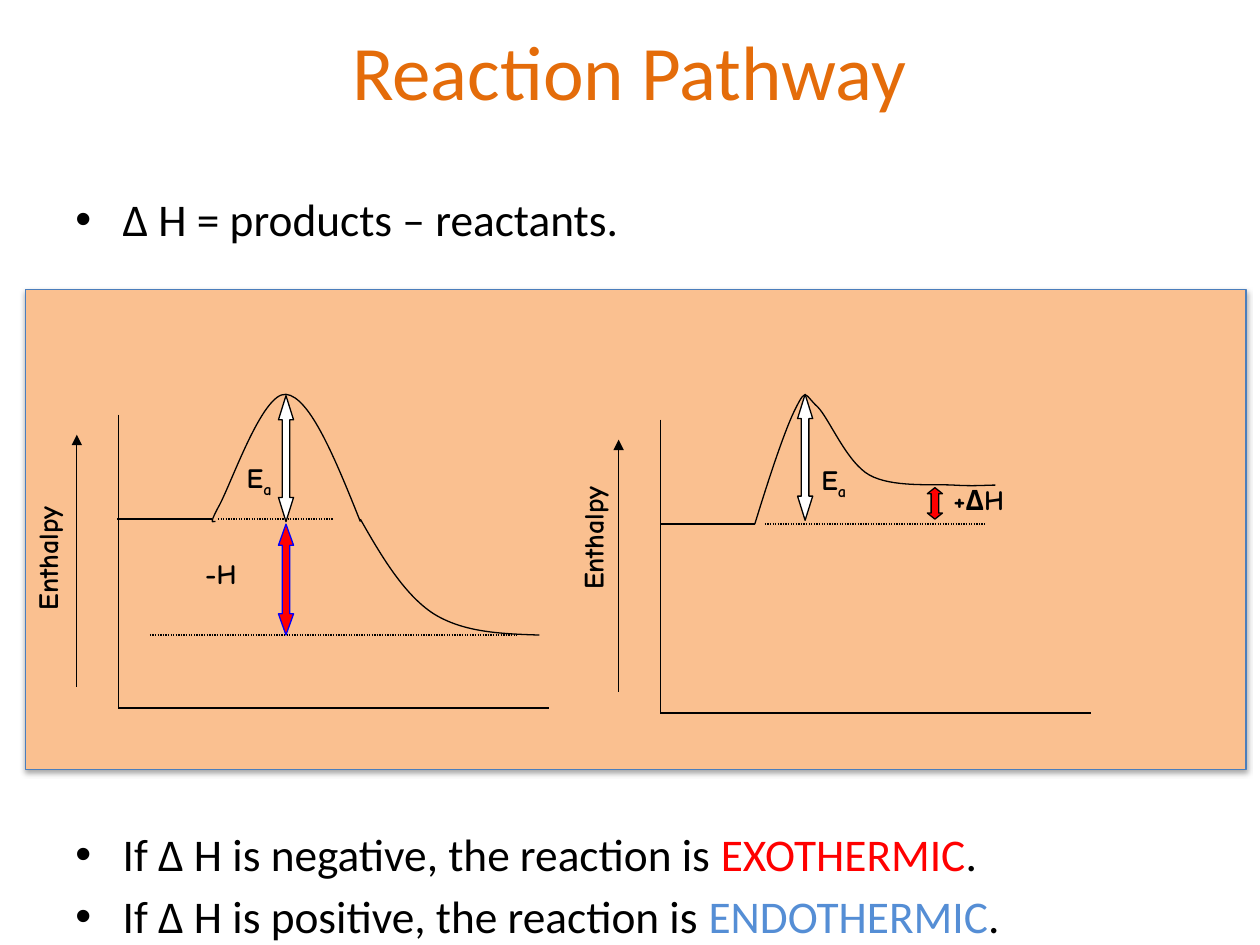
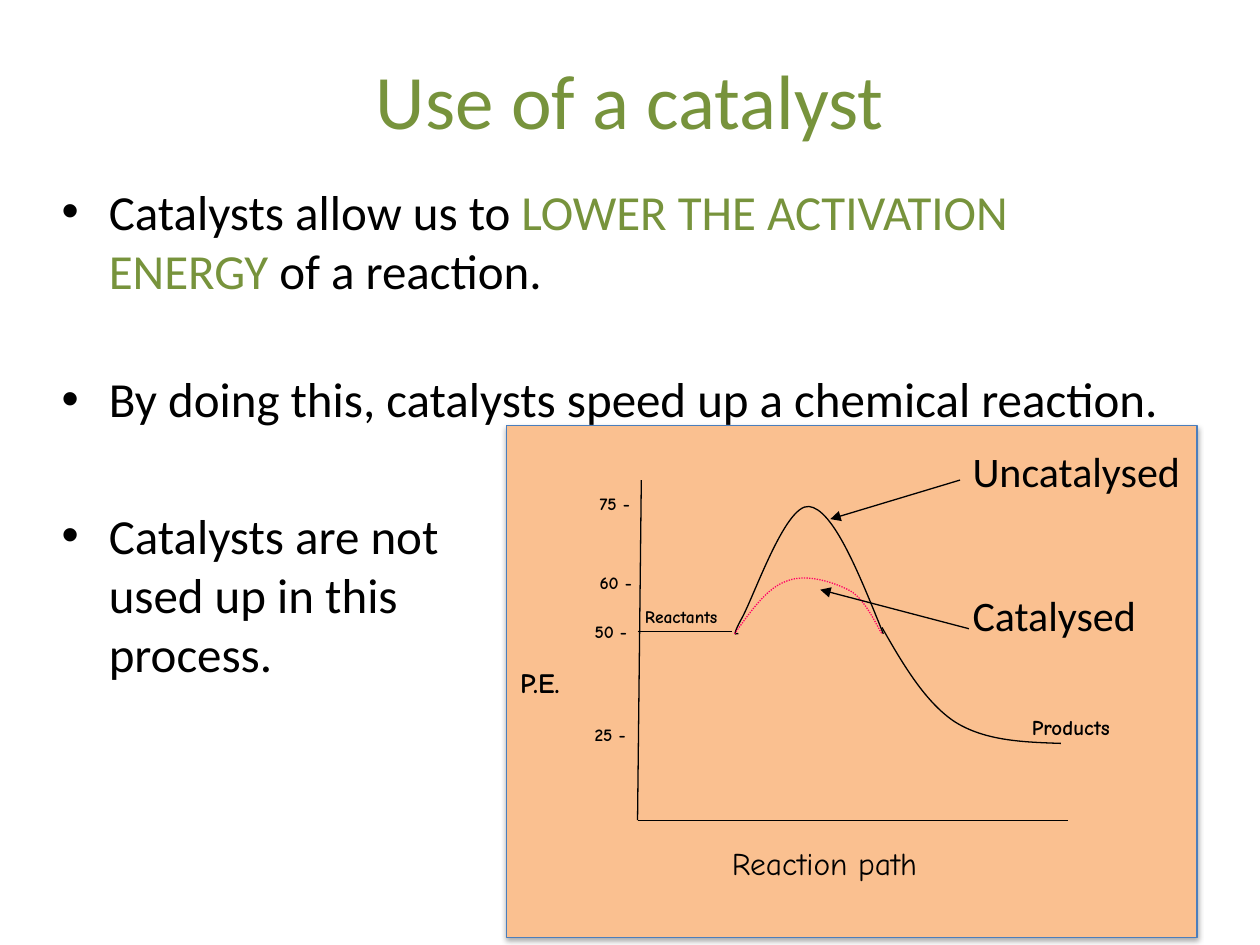
from dataclasses import dataclass
from typing import NamedTuple

from lxml.etree import SubElement
from pptx import Presentation
from pptx.dml.color import RGBColor
from pptx.enum.dml import MSO_LINE_DASH_STYLE as Dash
from pptx.enum.shapes import MSO_CONNECTOR as Connector, MSO_SHAPE as Preset
from pptx.enum.text import MSO_ANCHOR as Anchor, MSO_AUTO_SIZE as AutoSize, PP_ALIGN as Align
from pptx.oxml.ns import qn
from pptx.util import Emu, Inches, Pt

SLIDE_WIDTH, SLIDE_HEIGHT = Inches(10), Inches(7.5)
COLUMN, ROW = SLIDE_WIDTH / 10, SLIDE_HEIGHT / 7.5


@dataclass(frozen=True)
class Theme:
    body_font: str = "Calibri"
    label_font: str = "Comic Neue"
    ink: str = "000000"
    white: str = "FFFFFF"
    red: str = "FF0000"
    blue: str = "0000FF"
    sky: str = "558ED5"
    orange: str = "E46C0A"
    green: str = "77933C"
    pink: str = "FF0066"
    panel: str = "FAC090"
    panel_edge: str = "4B7EBC"
    title_size: float = 44
    wide_body_size: float = 25.9
    body_size: float = 28
    callout_size: float = 24
    caption_size: float = 18
    label_size: float = 16
    products_size: float = 12
    tick_size: float = 10
    line_width: float = 0.75
    bullet_indent: float = 27


THEME = Theme()


class Point(NamedTuple):
    column: float
    row: float

    def shifted(self, columns: float, rows: float) -> "Point":
        return Point(self.column + columns, self.row + rows)

    def emu(self) -> tuple[Emu, Emu]:
        return Emu(round(self.column * COLUMN)), Emu(round(self.row * ROW))


class Box(NamedTuple):
    left: float
    top: float
    width: float
    height: float

    def emu(self) -> tuple[Emu, ...]:
        return Point(self.left, self.top).emu() + Point(self.width, self.height).emu()


class Run(NamedTuple):
    text: str
    color: str = THEME.ink
    subscript: bool = False


class Paragraph(NamedTuple):
    runs: list[Run]
    space_before: float = 0


@dataclass(frozen=True)
class Label:
    runs: list[Run]
    box: Box
    size: float = THEME.label_size
    bold: bool = True
    rotation: float = 0


@dataclass(frozen=True)
class Line:
    start: Point
    end: Point
    dotted: bool = False
    arrow: bool = False


@dataclass(frozen=True)
class Curve:
    """Bezier knots and handles: a start, then three points per segment."""
    points: list[Point]
    color: str = THEME.ink
    dotted: bool = False

    def shifted(self, columns: float, rows: float) -> "Curve":
        return Curve([point.shifted(columns, rows) for point in self.points], self.color, self.dotted)


@dataclass(frozen=True)
class EnergyArrow:
    box: Box
    head: float
    fill: str
    edge: str = THEME.ink


def curve(*points: tuple[float, float], color: str = THEME.ink, dotted: bool = False) -> Curve:
    return Curve([Point(*point) for point in points], color, dotted)


HILL = curve((2.86, 4.14), (2.66, 3.64), (2.46, 3.15), (2.27, 3.13), (2.08, 3.11),
             (1.83, 3.86), (1.73, 4.03), (1.64, 4.2), (1.71, 4.12), (1.71, 4.14))
DESCENT = curve((2.86, 4.12), (3.03, 4.42), (3.21, 4.72), (3.44, 4.87),
                (3.68, 5.02), (3.98, 5.03), (4.28, 5.04))
ENDOTHERMIC = curve((5.99, 4.16), (6.11, 3.77), (6.24, 3.38), (6.32, 3.23), (6.4, 3.07), (6.39, 3.14),
                    (6.49, 3.23), (6.58, 3.32), (6.72, 3.67), (6.9, 3.77), (7.08, 3.87),
                    (7.4, 3.84), (7.57, 3.85), (7.74, 3.86), (7.82, 3.85), (7.9, 3.85))
CATALYSED = curve((5.83, 5.03), (5.96, 4.85), (6.09, 4.66), (6.25, 4.61), (6.4, 4.55), (6.62, 4.62),
                  (6.75, 4.69), (6.87, 4.76), (6.96, 4.97), (7, 5.03), color=THEME.pink, dotted=True)


def rgb(color: str) -> RGBColor:
    return RGBColor.from_string(color)


def style_line(line, color: str = THEME.ink, dotted: bool = False) -> None:
    line.color.rgb = rgb(color)
    line.width = Pt(THEME.line_width)
    if dotted:
        line.dash_style = Dash.ROUND_DOT


def draw_line(slide, line: Line) -> None:
    connector = slide.shapes.add_connector(Connector.STRAIGHT, *line.start.emu(), *line.end.emu())
    style_line(connector.line, dotted=line.dotted)
    if line.arrow:
        SubElement(connector.line._get_or_add_ln(), qn("a:tailEnd"), type="triangle")
    SubElement(connector._element.spPr, qn("a:effectLst"))


def draw_curve(slide, path: Curve) -> None:
    """Lay the points out as a polyline, then join every three into one Bezier segment."""
    builder = slide.shapes.build_freeform(*path.points[0].emu())
    builder.add_line_segments([point.emu() for point in path.points[1:]], close=False)
    shape = builder.convert_to_shape()
    outline = next(shape._element.iter(qn("a:path")))
    segments = outline.findall(qn("a:lnTo"))
    for first in range(0, len(segments), 3):
        bezier = SubElement(outline, qn("a:cubicBezTo"))
        for segment in segments[first:first + 3]:
            bezier.append(segment[0])
            outline.remove(segment)
    shape.shadow.inherit = False
    shape.fill.background()
    style_line(shape.line, path.color, path.dotted)


def draw_preset(slide, preset: Preset, box: Box, fill: str, edge: str):
    shape = slide.shapes.add_shape(preset, *box.emu())
    shape.shadow.inherit = False
    shape.fill.solid()
    shape.fill.fore_color.rgb = rgb(fill)
    style_line(shape.line, edge)
    return shape


def draw_energy_arrow(slide, arrow: EnergyArrow) -> None:
    shape = draw_preset(slide, Preset.UP_DOWN_ARROW, arrow.box, arrow.fill, arrow.edge)
    guides = shape._element.spPr.prstGeom.get_or_add_avLst()
    for guide in list(guides):
        guides.remove(guide)
    for name, share in (("adj1", 0.5), ("adj2", arrow.head)):
        SubElement(guides, qn("a:gd"), name=name, fmla=f"val {round(share * 100000)}")


def draw_panel(slide, box: Box) -> None:
    shape = draw_preset(slide, Preset.RECTANGLE, box, THEME.panel, THEME.panel_edge)
    effects = shape._element.spPr.find(qn("a:effectLst"))
    shadow = SubElement(effects, qn("a:outerShdw"), blurRad=str(Pt(3.1)), dist=str(Pt(1.8)),
                        dir="5400000", rotWithShape="0")
    color = SubElement(shadow, qn("a:srgbClr"), val=THEME.ink)
    SubElement(color, qn("a:alpha"), val="35000")


def add_runs(paragraph, runs: list[Run], font: str, size: float, bold: bool = False) -> None:
    """Add the runs; a newline in a run becomes a line break."""
    for item in runs:
        for index, text in enumerate(item.text.split("\n")):
            if index:
                paragraph.add_line_break()
            run = paragraph.add_run()
            run.text = text
            run.font.name, run.font.size, run.font.bold = font, Pt(size), bold
            run.font.color.rgb = rgb(item.color)
            if item.subscript:
                run.font._element.set("baseline", "-25000")


def draw_label(slide, label: Label, font: str = THEME.label_font):
    shape = slide.shapes.add_textbox(*label.box.emu())
    shape.rotation = label.rotation
    shape.text_frame.word_wrap = False
    shape.text_frame.auto_size = AutoSize.SHAPE_TO_FIT_TEXT
    add_runs(shape.text_frame.paragraphs[0], label.runs, font, label.size, label.bold)
    return shape


def draw_title(slide, text: str, color: str, box: Box) -> None:
    label = Label([Run(text, color)], box, THEME.title_size, bold=False)
    frame = draw_label(slide, label, THEME.body_font).text_frame
    frame.vertical_anchor = Anchor.MIDDLE
    frame.paragraphs[0].alignment = Align.CENTER


def draw_text(slide, box: Box, paragraphs: list[Paragraph], size: float, bulleted: bool = True) -> None:
    frame = slide.shapes.add_textbox(*box.emu()).text_frame
    frame.word_wrap = True
    for index, item in enumerate(paragraphs):
        paragraph = frame.add_paragraph() if index else frame.paragraphs[0]
        paragraph.space_before = Pt(item.space_before)
        if bulleted:
            properties = paragraph._p.get_or_add_pPr()
            indent = Pt(THEME.bullet_indent)
            properties.set("marL", str(indent))
            properties.set("indent", str(-indent))
            SubElement(properties, qn("a:buFont"), typeface="Arial")
            SubElement(properties, qn("a:buChar"), char="•")
        add_runs(paragraph, item.runs, THEME.body_font, size)


def draw_axes(slide, origin: Point, height: float, lean: float = 0) -> None:
    draw_line(slide, Line(origin.shifted(lean, -height), origin))
    draw_line(slide, Line(origin, origin.shifted(3.42, 0)))


def draw_enthalpy_axis(slide, origin: Point, label_corner: Point) -> None:
    draw_axes(slide, origin, 2.33)
    draw_line(slide, Line(origin.shifted(-0.33, -0.17), origin.shifted(-0.33, -2.17), arrow=True))
    draw_label(slide, Label([Run("Enthalpy")], Box(*label_corner, 1.11, 0.37), rotation=270))


def build_pathway_slide(slide) -> None:
    draw_text(slide, Box(0.5, 1.47, 9, 6.03), [
        Paragraph([Run("∆ H = products – reactants.")]),
        Paragraph([Run("If ∆ H is negative, the reaction is "), Run("EXOTHERMIC", THEME.red), Run(".")], 331.8),
        Paragraph([Run("If ∆ H is positive, the reaction is "), Run("ENDOTHERMIC", THEME.sky), Run(".")], 4.4),
    ], THEME.wide_body_size)
    draw_title(slide, "Reaction Pathway", THEME.orange, Box(2.67, 0.13, 4.65, 0.84))
    draw_panel(slide, Box(0.2, 2.3, 9.69, 3.81))
    draw_enthalpy_axis(slide, Point(0.94, 5.62), Point(-0.18, 4.2))
    draw_enthalpy_axis(slide, Point(5.24, 5.66), Point(4.15, 4.04))
    for path in (HILL, DESCENT, ENDOTHERMIC):
        draw_curve(slide, path)
    for start, end, row, dotted in ((0.93, 1.68, 4.12, False), (1.73, 2.65, 4.12, True), (1.19, 4.11, 5.04, True),
                                    (5.24, 5.99, 4.16, False), (6.07, 7.82, 4.16, True)):
        draw_line(slide, Line(Point(start, row), Point(end, row), dotted))
    activation = [Run("E"), Run("a", subscript=True)]
    for label in (Label(activation, Box(1.86, 3.61, 0.43, 0.37)),
                  Label(activation, Box(6.42, 3.62, 0.43, 0.37)),
                  Label([Run("-H")], Box(1.53, 4.37, 0.67, 0.37)),
                  Label([Run(" +ΔH")], Box(7.39, 3.78, 0.74, 0.37))):
        draw_label(slide, label)
    for arrow in (EnergyArrow(Box(2.21, 3.14, 0.12, 1), 1.6, THEME.white),
                  EnergyArrow(Box(6.33, 3.13, 0.12, 1), 1.6, THEME.white),
                  EnergyArrow(Box(2.21, 4.16, 0.12, 0.88), 1.4, THEME.red, THEME.blue),
                  EnergyArrow(Box(7.36, 3.87, 0.12, 0.25), 0.4, THEME.red)):
        draw_energy_arrow(slide, arrow)


def build_catalyst_slide(slide) -> None:
    draw_text(slide, Box(0.39, 1.39, 9, 4.95), [
        Paragraph([Run("Catalysts allow us to "), Run("LOWER THE ACTIVATION ENERGY", THEME.green),
                   Run(" of a reaction.")]),
        Paragraph([Run("By doing this, catalysts speed up a chemical reaction.")], 39.8),
        Paragraph([Run("Catalysts are not\nused up in this\nprocess.")], 44.6),
    ], THEME.body_size)
    draw_title(slide, "Use of a catalyst", THEME.green, Box(2.86, 0.36, 4.28, 0.84))
    draw_panel(slide, Box(4.02, 3.38, 5.48, 4.06))
    draw_axes(slide, Point(5.06, 6.51), 2.7, lean=0.03)
    draw_line(slide, Line(Point(5.06, 5.01), Point(5.81, 5.01)))
    for path in (HILL.shifted(4.15, 0.89), DESCENT.shifted(4.14, 0.86), CATALYSED):
        draw_curve(slide, path)
    for text, left, top in (("75 -", 4.66, 3.86), ("60 -", 4.66, 4.49), ("50 -", 4.62, 4.88), ("25 -", 4.62, 5.7)):
        draw_label(slide, Label([Run(text)], Box(left, top, 0.52, 0.27), THEME.tick_size))
    for label in (Label([Run("P.E.")], Box(4.03, 5.23, 0.65, 0.37)),
                  Label([Run("Reactants")], Box(5.02, 4.76, 0.86, 0.27), THEME.tick_size),
                  Label([Run("Products")], Box(8.09, 5.62, 0.89, 0.3), THEME.products_size),
                  Label([Run("Reaction path")], Box(5.71, 6.65, 1.8, 0.4), THEME.caption_size, bold=False)):
        draw_label(slide, label)
    draw_text(slide, Box(7.62, 3.49, 2.28, 1.7), [
        Paragraph([Run("Uncatalysed")]), Paragraph([Run("Catalysed")], 53)], THEME.callout_size, bulleted=False)
    draw_line(slide, Line(Point(7.62, 3.81), Point(6.59, 4.12), arrow=True))
    draw_line(slide, Line(Point(7.69, 4.99), Point(6.51, 4.68), arrow=True))


def main() -> None:
    presentation = Presentation()
    presentation.slide_width, presentation.slide_height = SLIDE_WIDTH, SLIDE_HEIGHT
    for build in (build_pathway_slide, build_catalyst_slide):
        build(presentation.slides.add_slide(presentation.slide_layouts[6]))
    presentation.save("out.pptx")


if __name__ == "__main__":
    main()
